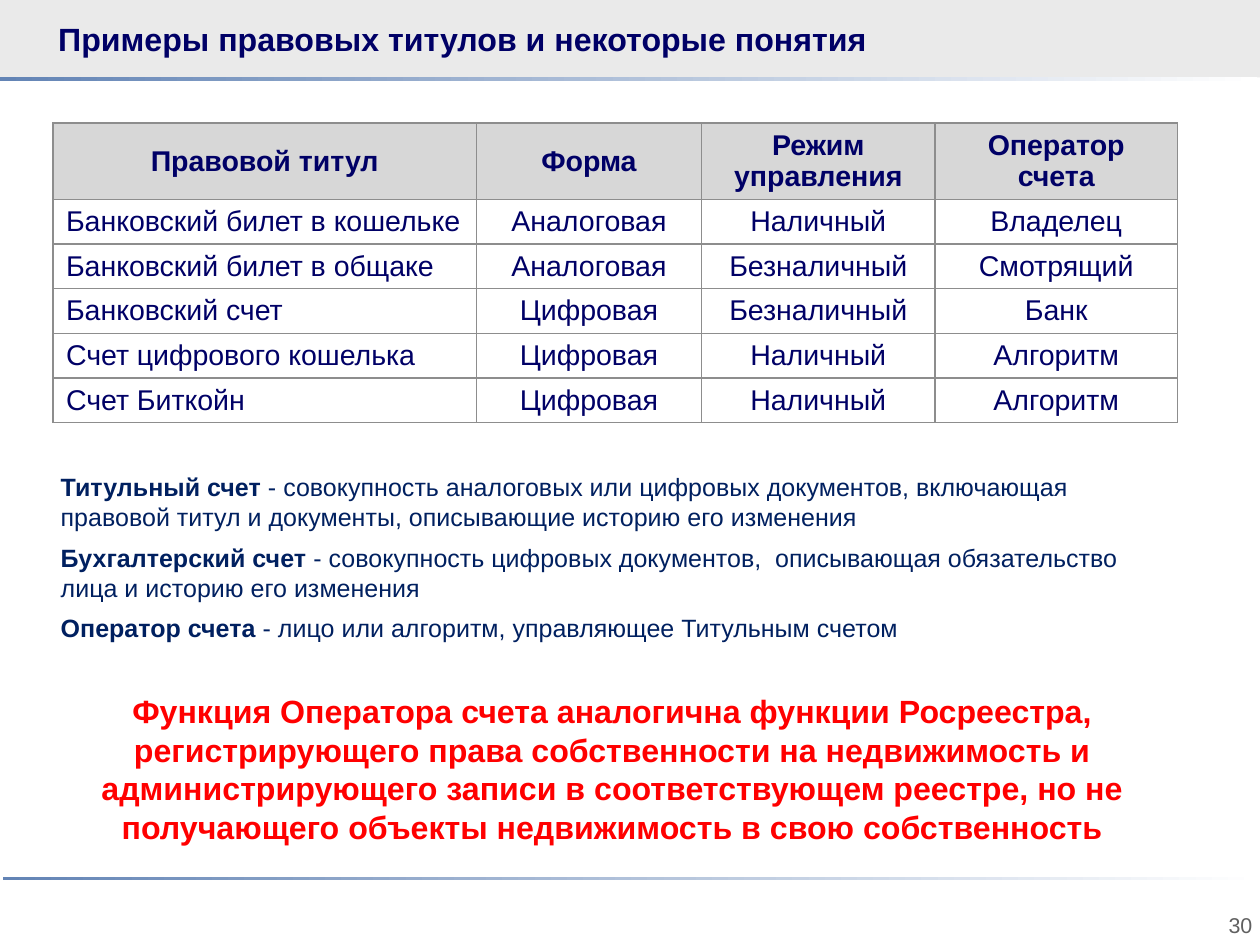
from lxml import etree
from pptx import Presentation
from pptx import util as u
from pptx.dml.color import RGBColor
from pptx.enum import shapes, text
from pptx.oxml.ns import qn

# Content
HEAD = "Примеры правовых титулов и некоторые понятия"
ROWS = [
    ("Правовой титул", "Форма", "Режим управления", "Оператор счета"),
    ("Банковский билет в кошельке", "Аналоговая", "Наличный", "Владелец"),
    ("Банковский билет в общаке", "Аналоговая", "Безналичный", "Смотрящий"),
    ("Банковский счет", "Цифровая", "Безналичный", "Банк"),
    ("Счет цифрового кошелька", "Цифровая", "Наличный", "Алгоритм"),
    ("Счет Биткойн", "Цифровая", "Наличный", "Алгоритм"),
]
TERMS = [
    ("Титульный счет ", "- совокупность аналоговых или цифровых документов, "
     "включающая правовой титул и документы, описывающие историю его изменения"),
    ("Бухгалтерский счет", " - совокупность цифровых документов,  "
     "описывающая обязательство лица и историю его изменения"),
    ("Оператор счета ", "- лицо или алгоритм, управляющее Титульным счетом"),
]
MORAL = ("Функция Оператора счета аналогична функции Росреестра, "
         "регистрирующего права собственности на недвижимость и "
         "администрирующего записи в соответствующем реестре, но не "
         "получающего объекты недвижимость в свою собственность")
PAGE = "30"

COLORS = {"band": "EAEAEA", "rule": "6384B5", "white": "FFFFFF",
          "navy": "000066", "ink": "002060", "red": "FF0000",
          "gray": "606060", "head": "D7D7D7", "edge": "8D8D8D"}
WIDTHS = (8.36, 4.45, 4.61, 4.79)
HEAD_H, ROW_H = 1.14, 0.74
LEFT, CENTER, RIGHT = (text.PP_ALIGN.LEFT, text.PP_ALIGN.CENTER,
                       text.PP_ALIGN.RIGHT)


def color(name):
    return RGBColor.from_string(COLORS[name])


def place(*lens):
    return [u.Cm(n) for n in lens]


def write(par, words, size, tone, bold=False):
    run = par.add_run()
    run.text = words
    font = run.font
    font.name, font.size, font.bold = "Arial", u.Pt(size), bold
    font.color.rgb = color(tone)


def add_box(x, y, w, h):
    frame = slide.shapes.add_textbox(*place(x, y, w, h)).text_frame
    frame.word_wrap = True
    return frame


def add_grid(rows, cols, x, y, w, h):
    grid = slide.shapes.add_table(rows, cols, *place(x, y, w, h)).table
    grid.first_row = grid.horz_banding = False
    return grid


def add_edges(cell, tone=None):
    props = cell._tc.get_or_add_tcPr()
    for side in ("lnL", "lnR", "lnT", "lnB"):
        line = etree.SubElement(props, qn("a:" + side), w=str(u.Pt(1)))
        if tone:
            fill = etree.SubElement(line, qn("a:solidFill"))
            etree.SubElement(fill, qn("a:srgbClr"), val=COLORS[tone])
        else:
            etree.SubElement(line, qn("a:noFill"))


def add_rule(x, y):
    cell = add_grid(1, 1, x, y, 24.84, 0.07).cell(0, 0)
    add_edges(cell)
    cell.margin_left = cell.margin_right = 0
    cell.margin_top = cell.margin_bottom = 0
    par = cell.text_frame.paragraphs[0]
    etree.SubElement(par._p, qn("a:endParaRPr"), sz="100")
    cell.fill.gradient()
    cell.fill.gradient_angle = 0
    for stop, tone in zip(cell.fill.gradient_stops, ("rule", "white")):
        stop.color.rgb = color(tone)


deck = Presentation()
deck.slide_width, deck.slide_height = place(24.89, 18.67)
slide = deck.slides.add_slide(deck.slide_layouts[5])

# Title on its band
title = slide.shapes.title
band = slide.shapes.add_shape(shapes.MSO_SHAPE.RECTANGLE,
                              *place(0, 0, 24.89, 1.53))
band.shadow.inherit = False
band.line.fill.background()
band.fill.solid()
band.fill.fore_color.rgb = color("band")
title.element.addprevious(band.element)
title.left, title.top, title.width, title.height = place(0.64, 0, 21.34, 1.52)
frame = title.text_frame
frame.auto_size = text.MSO_AUTO_SIZE.NONE
frame.vertical_anchor = text.MSO_ANCHOR.MIDDLE
frame.margin_left, frame.margin_right = place(0.51, 0)
frame.margin_top = frame.margin_bottom = u.Cm(0.1)
frame.paragraphs[0].alignment = LEFT
write(frame.paragraphs[0], HEAD, 18, "navy", True)

# Fading rules
add_rule(0, 1.53)
add_rule(0.05, 17.32)

# Table of legal titles
high = HEAD_H + ROW_H * (len(ROWS) - 1)
table = add_grid(len(ROWS), len(WIDTHS), 1.05, 2.43, sum(WIDTHS), high)
table.first_row = True
for col, wide in zip(table.columns, WIDTHS):
    col.width = u.Cm(wide)
for r, row in enumerate(ROWS):
    top = r == 0
    table.rows[r].height = u.Cm(HEAD_H if top else ROW_H)
    for c, words in enumerate(row):
        cell = table.cell(r, c)
        add_edges(cell, "edge")
        cell.fill.solid()
        cell.fill.fore_color.rgb = color("head" if top else "white")
        cell.vertical_anchor = text.MSO_ANCHOR.MIDDLE
        par = cell.text_frame.paragraphs[0]
        par.alignment = CENTER if top or c else LEFT
        write(par, words, 16, "navy", top)

# Definitions
frame = add_box(0.95, 9.19, 22.3, 3.68)
for i, (term, sense) in enumerate(TERMS):
    par = frame.add_paragraph() if i else frame.paragraphs[0]
    par.space_before = u.Pt(6)
    write(par, term, 14, "ink", True)
    write(par, sense, 14, "ink")

# Conclusion
par = add_box(0.54, 13.54, 23.11, 3.33).paragraphs[0]
par.alignment = CENTER
par.space_before = u.Pt(12)
write(par, MORAL, 18, "red", True)

# Page number
frame = add_box(21.41, 18.03, 3.33, 0.51)
frame.margin_left = frame.margin_right = 0
frame.margin_top = frame.margin_bottom = 0
frame.paragraphs[0].alignment = RIGHT
write(frame.paragraphs[0], PAGE, 12, "gray")

deck.save("out.pptx")
